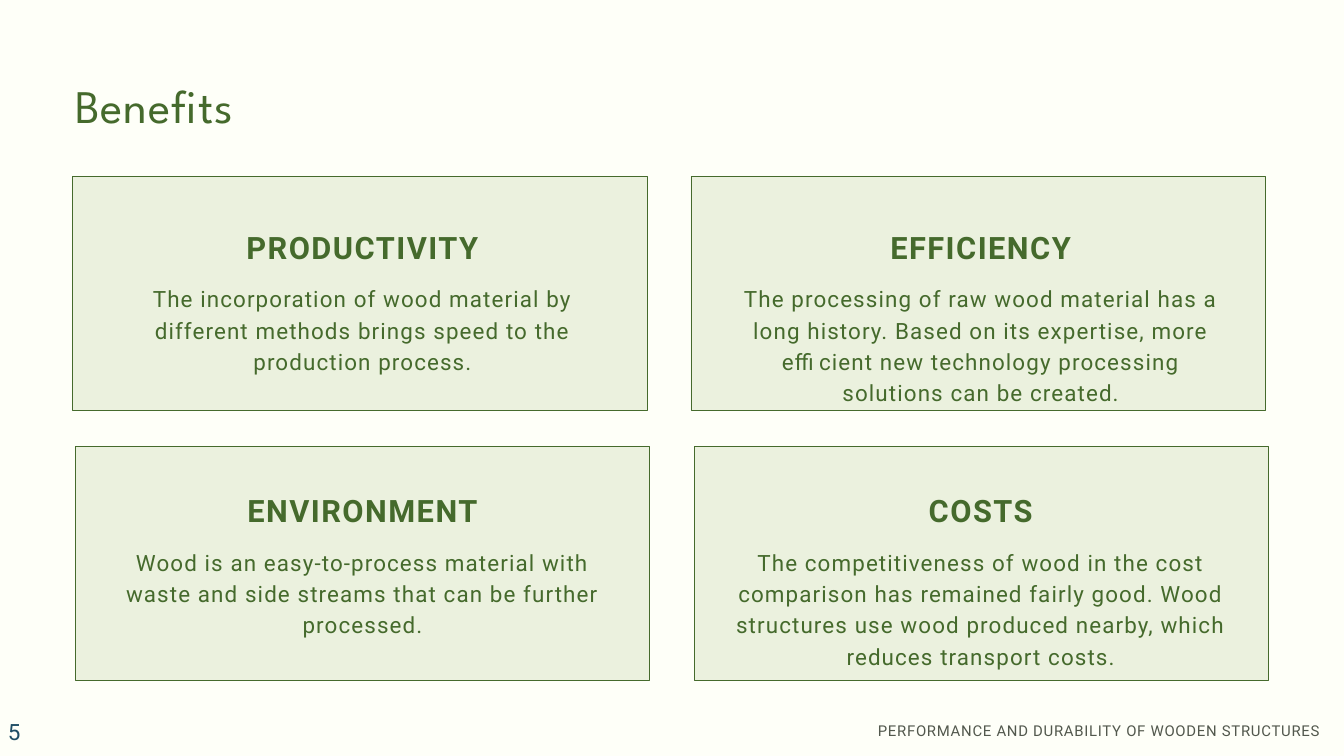
from dataclasses import dataclass

from pptx import Presentation
from pptx.dml.color import RGBColor
from pptx.enum.shapes import MSO_SHAPE
from pptx.enum.text import MSO_ANCHOR as Anchor, MSO_AUTO_SIZE as AutoSize, PP_ALIGN as Align
from pptx.slide import Slide
from pptx.util import Pt

IVORY = RGBColor(0xFE, 0xFF, 0xF8)
PALE_GREEN = RGBColor(0xEB, 0xF1, 0xDE)
FOREST = RGBColor(0x45, 0x6A, 0x2C)
GREY = RGBColor(0x52, 0x58, 0x4D)
NAVY = RGBColor(0x1E, 0x4D, 0x65)

PANEL_WIDTH, PANEL_HEIGHT = 615.6, 250.6
TEXT_WIDTH = 532
TEXT_LEFTS = (122.4, 784.8)
HEADING_TOPS = (243.4, 525.6)
HEADING_HEIGHT, BODY_OFFSET, BODY_LEADING = 40.3, 57.6, 33.6


@dataclass(frozen=True)
class TextStyle:
    size: float
    tracking: float
    leading: float | None = None
    color: RGBColor = FOREST
    align: Align = Align.LEFT
    font: str = "Roboto"
    bold: bool = False


@dataclass(frozen=True)
class Benefit:
    column: int
    row: int
    panel_left: float
    panel_top: float
    heading: str
    body: str
    body_lines: int


FOOTER = TextStyle(16, 0.8, 22.4, GREY, Align.RIGHT)
TITLE = TextStyle(50, 1, 66.8, font="League Spartan")
HEADING = TextStyle(33, 1.6, 41.2, align=Align.CENTER, bold=True)
BODY = TextStyle(24, 1.2, BODY_LEADING, align=Align.CENTER)
PAGE_NUMBER = TextStyle(24, 1.2, color=NAVY)

BENEFITS = (
    Benefit(0, 1, 80.6, 478.1, "ENVIRONMENT",
            "Wood is an easy-to-process material with waste and side streams "
            "that can be further processed.", 3),
    Benefit(0, 0, 77.8, 188.6, "PRODUCTIVITY",
            "The incorporation of wood material by different methods brings "
            "speed to the production process.", 3),
    Benefit(1, 0, 740.2, 188.6, "EFFICIENCY",
            "The processing of raw wood material has a long history. Based on its "
            "expertise, more efficient new technology processing solutions can be created.", 4),
    Benefit(1, 1, 743.8, 478.1, "COSTS",
            "The competitiveness of wood in the cost comparison has remained fairly good. "
            "Wood structures use wood produced nearby, which reduces transport costs.", 4),
)


def add_text(slide: Slide, text: str, left: float, top: float, width: float,
             height: float, style: TextStyle, **overrides: object) -> None:
    frame = slide.shapes.add_textbox(Pt(left), Pt(top), Pt(width), Pt(height)).text_frame
    frame_format = {
        "word_wrap": True, "auto_size": AutoSize.SHAPE_TO_FIT_TEXT,
        "margin_left": 0, "margin_top": 0, "margin_right": 0, "margin_bottom": 0,
    } | overrides
    for name, value in frame_format.items():
        setattr(frame, name, value)

    paragraph = frame.paragraphs[0]
    paragraph.alignment = style.align
    if style.leading is not None:
        paragraph.line_spacing = Pt(style.leading)

    run = paragraph.add_run()
    run.text = text
    font_format = {"name": style.font, "size": Pt(style.size), "bold": style.bold}
    for name, value in font_format.items():
        setattr(run.font, name, value)
    run.font.color.rgb = style.color
    run._r.get_or_add_rPr().set("spc", str(round(style.tracking * 100)))


def add_benefit(slide: Slide, benefit: Benefit) -> None:
    panel = slide.shapes.add_shape(
        MSO_SHAPE.RECTANGLE, Pt(benefit.panel_left), Pt(benefit.panel_top),
        Pt(PANEL_WIDTH), Pt(PANEL_HEIGHT))
    panel.shadow.inherit = False
    panel.fill.solid()
    panel.fill.fore_color.rgb = PALE_GREEN
    panel.line.color.rgb = FOREST
    panel.line.width = Pt(0.75)

    left, top = TEXT_LEFTS[benefit.column], HEADING_TOPS[benefit.row]
    add_text(slide, benefit.heading, left, top, TEXT_WIDTH, HEADING_HEIGHT, HEADING)
    add_text(slide, benefit.body, left, top + BODY_OFFSET, TEXT_WIDTH,
             benefit.body_lines * BODY_LEADING, BODY)


def main() -> None:
    presentation = Presentation()
    presentation.slide_width, presentation.slide_height = Pt(1440), Pt(810)
    slide = presentation.slides.add_slide(presentation.slide_layouts[6])
    slide.background.fill.solid()
    slide.background.fill.fore_color.rgb = IVORY

    add_text(slide, "PERFORMANCE AND DURABILITY OF WOODEN STRUCTURES",
             815.8, 770.4, 599, 20.9, FOOTER)
    add_text(slide, "Benefits", 80.6, 75.6, 558, 67.7, TITLE)
    for benefit in BENEFITS:
        add_benefit(slide, benefit)
    add_text(slide, "5", 1.4, 769.7, 167.8, 28.8, PAGE_NUMBER,
             auto_size=AutoSize.NONE, vertical_anchor=Anchor.MIDDLE,
             margin_left=Pt(7.2), margin_right=Pt(7.2),
             margin_top=Pt(3.6), margin_bottom=Pt(3.6))
    presentation.save("out.pptx")


if __name__ == "__main__":
    main()
